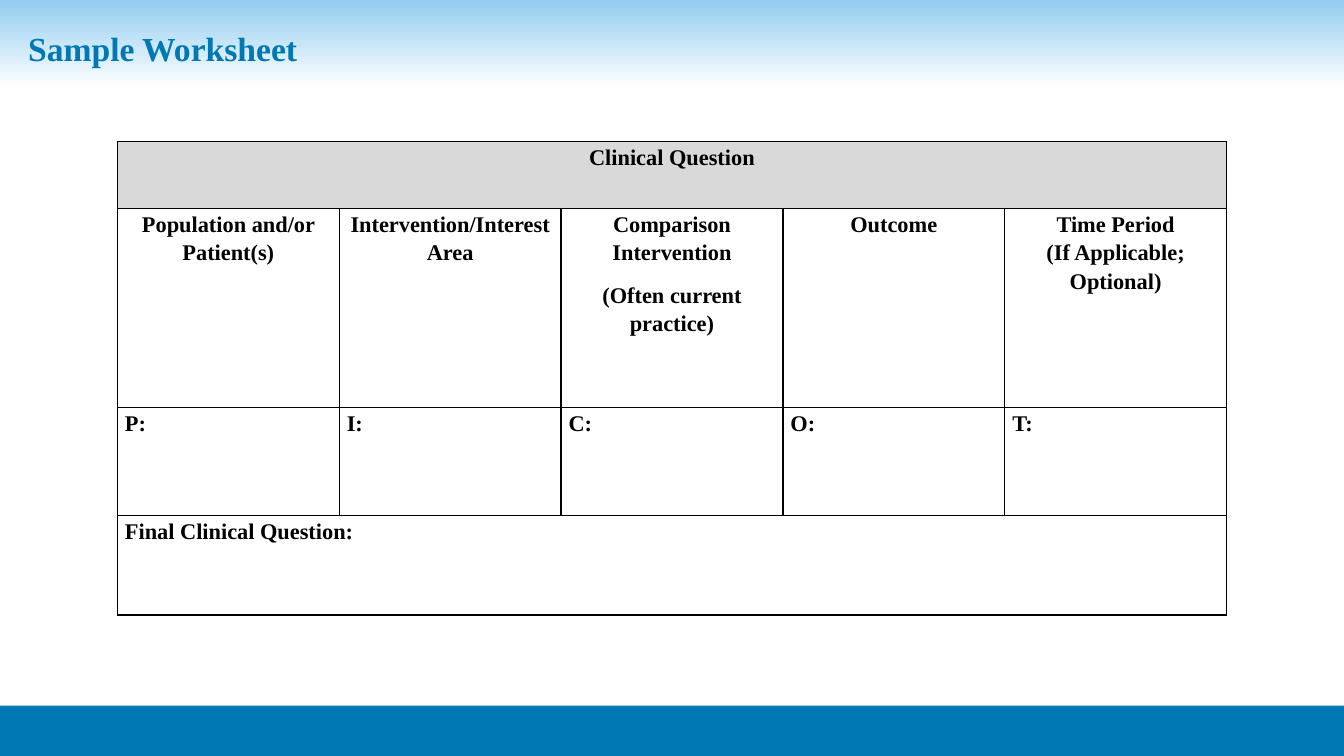
from dataclasses import dataclass

from lxml import etree
from pptx import Presentation
from pptx.dml.color import RGBColor
from pptx.enum.shapes import MSO_SHAPE
from pptx.enum.text import MSO_ANCHOR, PP_ALIGN
from pptx.oxml.ns import qn
from pptx.util import Cm, Pt

RECTANGLE = MSO_SHAPE.RECTANGLE
MIDDLE = MSO_ANCHOR.MIDDLE
CENTER, LEFT = PP_ALIGN.CENTER, PP_ALIGN.LEFT

FONT = "Times New Roman"
BLUE, SKY, WHITE, GREY, BLACK = "0078B3", "92CCF0", "FFFFFF", "D9D9D9", "000000"
SLIDE_WIDTH, SLIDE_HEIGHT = Cm(33.87), Cm(19.05)
COLUMN_WIDTH = Cm(5.59)
COLUMN_COUNT = 5
BORDER_WIDTH = Pt(1)


@dataclass
class WorksheetRow:
    """A row whose cells each list their paragraphs; one cell spans the row."""
    height: float
    cells: list[list[str]]
    align: PP_ALIGN = LEFT
    fill: str | None = None


ROWS = [
    WorksheetRow(1.68, [["Clinical Question"]], CENTER, GREY),
    WorksheetRow(5.02, [
        ["Population and/or Patient(s)"],
        ["Intervention/Interest Area"],
        ["Comparison Intervention", "(Often current practice)"],
        ["Outcome"],
        ["Time Period", "(If Applicable; Optional)"],
    ], CENTER, WHITE),
    WorksheetRow(2.72, [[f"{letter}:"] for letter in "PICOT"]),
    WorksheetRow(2.51, [["Final Clinical Question:"]]),
]
SPACE_AFTER = {"Comparison Intervention": Pt(10)}


def color(hex_value: str) -> RGBColor:
    return RGBColor.from_string(hex_value)


def style_paragraph(para, size: float, hex_value: str) -> None:
    para.font.name = FONT
    para.font.size = Pt(size)
    para.font.bold = True
    para.font.color.rgb = color(hex_value)


def add_band(page, top: float, height: float):
    band = page.shapes.add_shape(RECTANGLE, 0, Cm(top), SLIDE_WIDTH, Cm(height))
    band.shadow.inherit = False
    band.line.fill.background()
    return band


def add_title(page, text: str) -> None:
    box = page.shapes.add_textbox(Cm(0.46), Cm(0.53), Cm(33.4), Cm(1.47))
    frame = box.text_frame
    frame.word_wrap = True
    frame.vertical_anchor = MIDDLE
    para = frame.paragraphs[0]
    para.text = text
    para.line_spacing = 0.9
    style_paragraph(para, 24, BLUE)


def add_borders(cell) -> None:
    properties = cell._tc.get_or_add_tcPr()
    for side in ("a:lnL", "a:lnR", "a:lnT", "a:lnB"):
        line = etree.SubElement(properties, qn(side), w=str(BORDER_WIDTH))
        fill = etree.SubElement(line, qn("a:solidFill"))
        etree.SubElement(fill, qn("a:srgbClr"), val=BLACK)


def format_cell(cell, fill: str | None) -> None:
    add_borders(cell)
    cell.margin_left = cell.margin_right = Cm(0.19)
    cell.margin_top = cell.margin_bottom = 0
    if fill:
        cell.fill.solid()
        cell.fill.fore_color.rgb = color(fill)
    else:
        cell.fill.background()


def write_cell(cell, lines: list[str], align: PP_ALIGN) -> None:
    cell.text = "\n".join(lines)
    for para in cell.text_frame.paragraphs:
        para.alignment = align
        para.line_spacing = 1.15
        para.space_after = SPACE_AFTER.get(para.text, Pt(0))
        style_paragraph(para, 16, BLACK)


def add_worksheet(page, rows: list[WorksheetRow]) -> None:
    total_height = Cm(sum(row.height for row in rows))
    frame = page.shapes.add_table(len(rows), COLUMN_COUNT, Cm(2.96), Cm(3.57),
                                  COLUMN_WIDTH * COLUMN_COUNT, total_height)
    table = frame.table
    table.first_row = table.horz_banding = False
    for column in table.columns:
        column.width = COLUMN_WIDTH
    for index, row in enumerate(rows):
        table.rows[index].height = Cm(row.height)
        cells = [table.cell(index, column) for column in range(COLUMN_COUNT)]
        for cell in cells:
            format_cell(cell, row.fill)
        if len(row.cells) == 1:
            cells[0].merge(cells[-1])
        for cell, lines in zip(cells, row.cells):
            write_cell(cell, lines, row.align)


def main() -> None:
    deck = Presentation()
    deck.slide_width, deck.slide_height = SLIDE_WIDTH, SLIDE_HEIGHT
    page = deck.slides.add_slide(deck.slide_layouts[6])

    header = add_band(page, 0, 2.21)
    header.fill.gradient()
    header.fill.gradient_angle = 270
    for stop, hex_value in zip(header.fill.gradient_stops, (SKY, WHITE)):
        stop.color.rgb = color(hex_value)

    footer = add_band(page, 17.78, 1.27)
    footer.fill.solid()
    footer.fill.fore_color.rgb = color(BLUE)

    add_title(page, "Sample Worksheet")
    add_worksheet(page, ROWS)
    deck.save("out.pptx")


if __name__ == "__main__":
    main()
